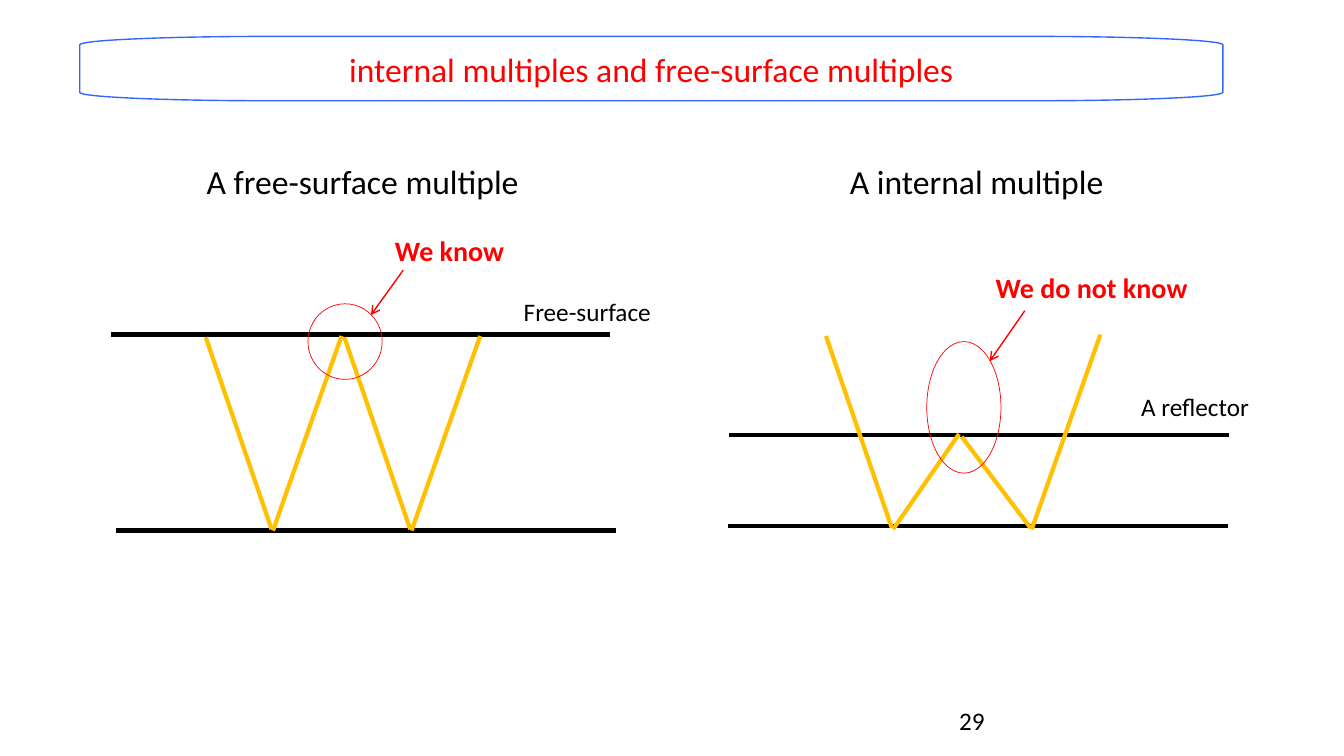
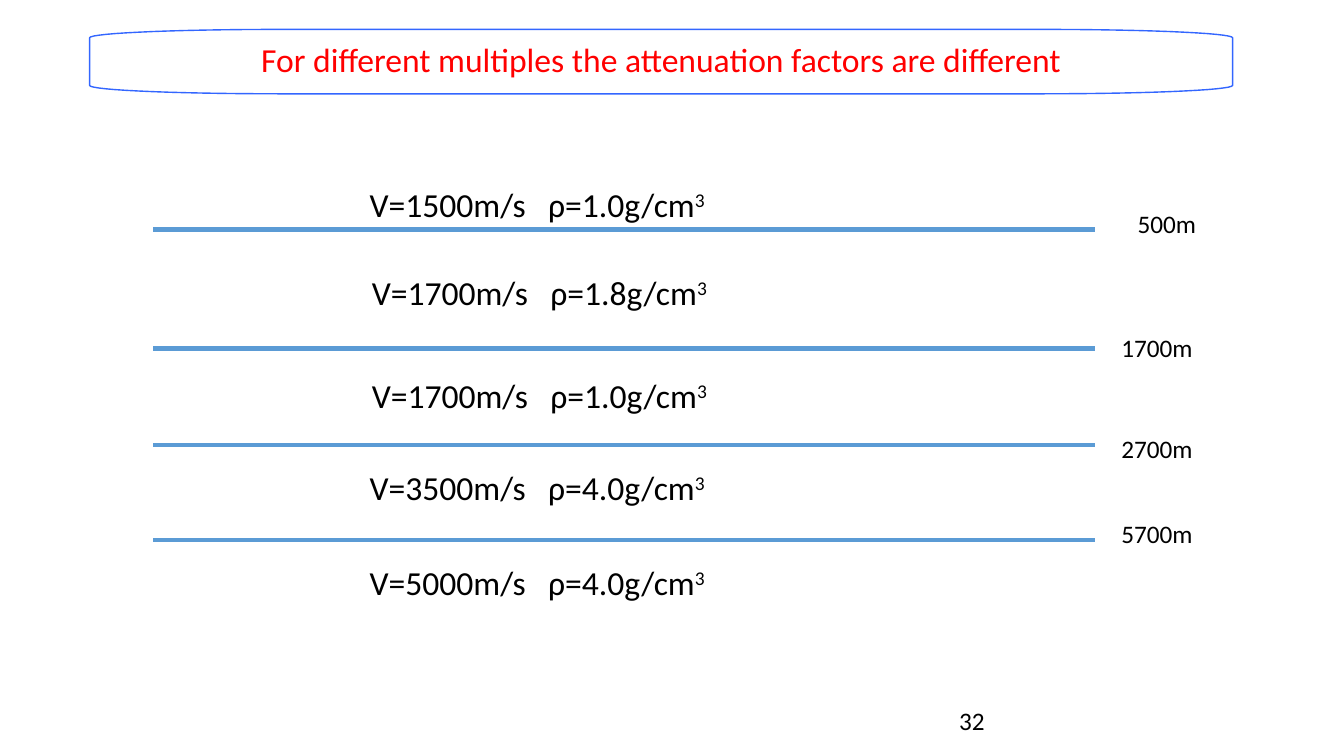
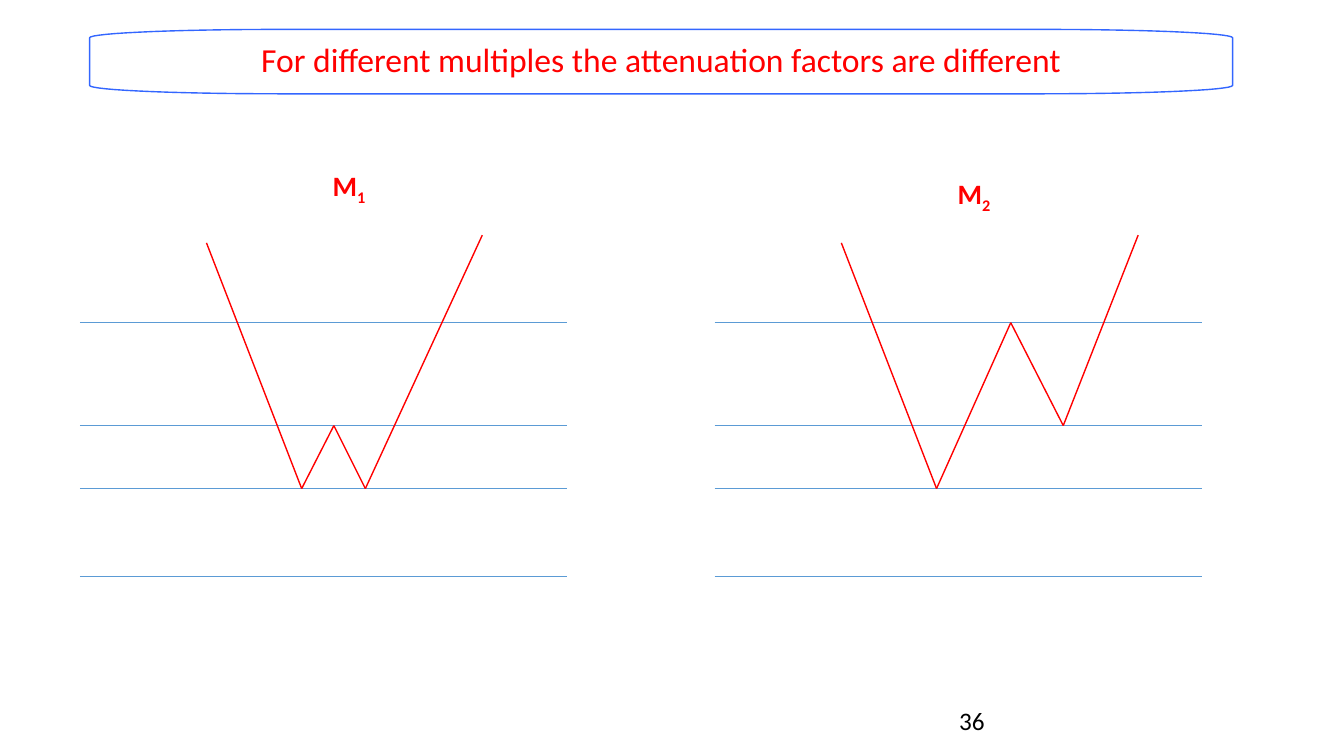
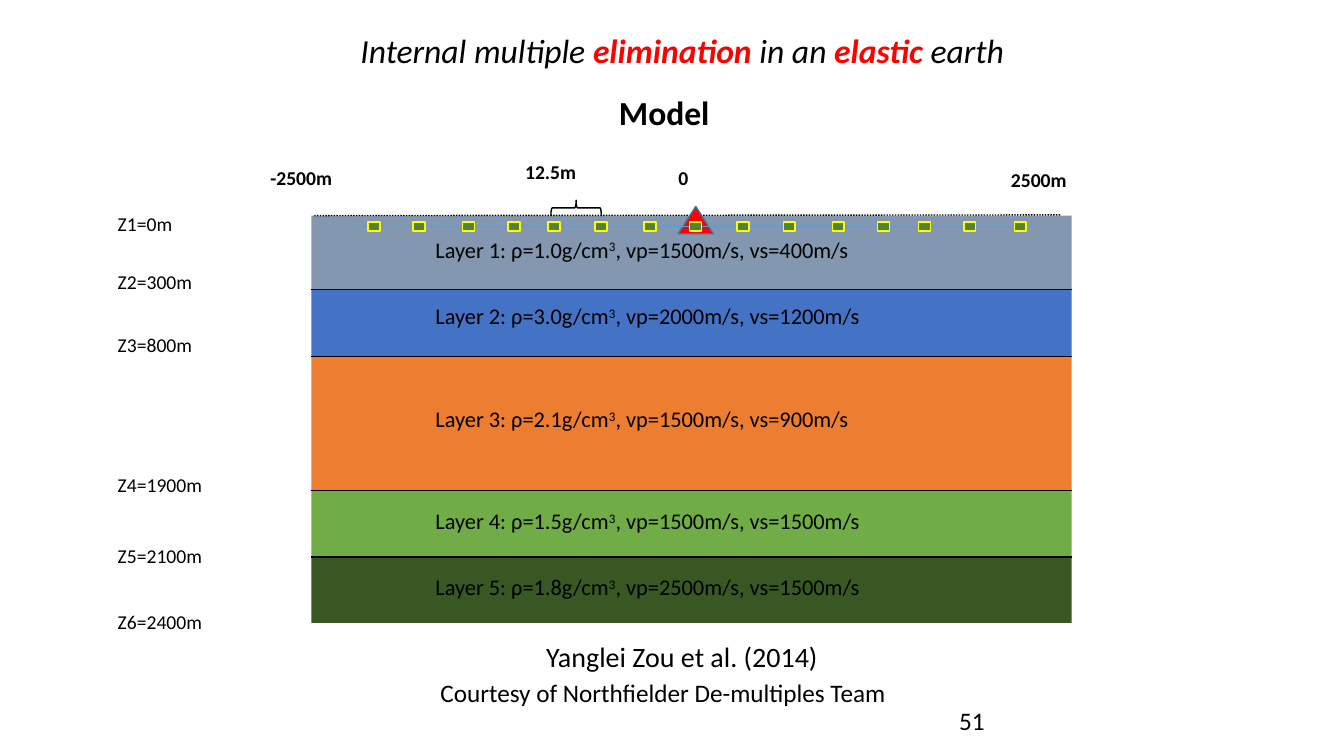
from itertools import pairwise
from math import cos, radians, sin

from lxml.etree import SubElement
from pptx import Presentation
from pptx.dml.color import RGBColor
from pptx.enum.dml import MSO_LINE
from pptx.enum.shapes import MSO_CONNECTOR, MSO_SHAPE
from pptx.enum.text import MSO_ANCHOR, MSO_AUTO_SIZE, PP_ALIGN
from pptx.oxml.ns import qn
from pptx.util import Pt

FONT = "Calibri"
BLACK = RGBColor(0x00, 0x00, 0x00)
RED = RGBColor(0xFF, 0x00, 0x00)
BAND_BLUE = RGBColor(0x33, 0x66, 0xFF)
LINE_BLUE = RGBColor(0x5B, 0x9B, 0xD5)
RAY_GOLD = RGBColor(0xFF, 0xC0, 0x00)
SOURCE_EDGE = RGBColor(0x43, 0x73, 0x9E)
RECEIVER_GREEN = RGBColor(0x54, 0x82, 0x35)
YELLOW = RGBColor(0xFF, 0xFF, 0x00)

SUPER = {"baseline": 30000}
SUB = {"baseline": -25000}
KEYWORD = {"bold": True, "color": RED}
HEIGHTS = {14: 24.5, 16: 26.5, 18: 29, 20: 31.5, 24: 36}

SURFACE_TITLE = "internal multiples and free-surface multiples"
FACTOR_TITLE = "For different multiples the attenuation factors are different"
MODEL_TITLE = [("Internal multiple ", {}), ("elimination", KEYWORD), (" in an ", {}),
               ("elastic", KEYWORD), (" earth", {})]

SURFACE_WIDTH = 357
SURFACES = [(79, 239), (83, 379), (521, 311), (520, 376)]
SURFACE_RAYS = [
    (147, 241, 194, 378), (244, 240, 195, 379),
    (246, 241, 293, 378), (343, 240, 294, 379),
    (590, 240, 637, 377), (685, 310, 638, 378),
    (687, 312, 736, 377), (786, 239, 737, 378),
]
SURFACE_LABELS = [
    ("Free-surface", 367, 208, 106.5, 18), ("A reflector", 808, 276, 93, 18),
    ("A internal multiple", 600, 111.5, 198, 24),
    ("A free-surface multiple", 140.5, 111.5, 240.5, 24),
]
CALLOUTS = [
    ("We know", (275, 163, 94), (220, 217, 53, 54), (288, 193, 265, 225)),
    ("We do not know", (704, 190, 154), (662, 244, 53, 94), (732, 222, 707, 258)),
]

INTERFACES = [164, 249, 318, 386]
DEPTHS = [("500m", 805.5, 145.5, 57), ("1700m", 794, 234, 66),
          ("2700m", 794, 306, 66), ("5700m", 794, 366.5, 66)]
MEDIA = [
    ("V=1500m/s", "ρ=1.0g/cm", 257, 128), ("V=1700m/s", "ρ=1.8g/cm", 258.5, 191),
    ("V=1700m/s", "ρ=1.0g/cm", 258.5, 264), ("V=3500m/s", "ρ=4.0g/cm", 257, 330),
    ("V=5000m/s", "ρ=4.0g/cm", 257, 398),
]

PANEL_WIDTH = 348
PANEL_LINES = [230.5, 304, 349, 412]
PANELS = [
    ("1", 57, (230.5, 116.5),
     [(90.5, 173.5), (158.5, 349), (181.5, 304), (204, 349), (287.5, 168)]),
    ("2", 510.5, (677, 122.5),
     [(90.5, 173.5), (158.5, 349), (211.5, 230.5), (249, 304), (302.5, 168)]),
]

MODEL_LEFT, MODEL_WIDTH = 222.5, 543
LAYER_EDGES = [154, 207, 254.5, 350.5, 398, 445]
LAYERS = [
    ("1.0", "vp=1500m/s, vs=400m/s", 165, RGBColor(0x84, 0x97, 0xB0)),
    ("3.0", "vp=2000m/s, vs=1200m/s", 212.5, RGBColor(0x44, 0x72, 0xC4)),
    ("2.1", "vp=1500m/s, vs=900m/s", 286, RGBColor(0xED, 0x7D, 0x31)),
    ("1.5", "vp=1500m/s, vs=1500m/s", 359, RGBColor(0x70, 0xAD, 0x47)),
    ("1.8", "vp=2500m/s, vs=1500m/s", 406, RGBColor(0x38, 0x57, 0x23)),
]
LEVELS = [("0m", 147.5), ("300m", 189.5), ("800m", 234.5),
          ("1900m", 334), ("2100m", 385), ("2400m", 432)]
OFFSETS = [("-2500m", 186, 115, 59), ("0", 477.5, 115, 21.5),
           ("2500m", 715, 116.5, 55), ("12.5m", 368, 111, 51)]
RECEIVERS = [263, 295, 330.5, 363, 391.5, 425, 460, 492.5, 526.5,
             559.5, 594.5, 627, 656, 688.5, 724.5]


def write(sp, runs, size=18, color=BLACK, bold=False, italic=False,
          align=PP_ALIGN.LEFT, anchor=MSO_ANCHOR.TOP, wrap=True, spacing=None, tab=None):
    tf = sp.text_frame
    tf.word_wrap = wrap
    tf.auto_size = MSO_AUTO_SIZE.NONE if wrap else MSO_AUTO_SIZE.SHAPE_TO_FIT_TEXT
    tf.vertical_anchor = anchor
    p = tf.paragraphs[0]
    if tab:
        tabs = SubElement(p._p.get_or_add_pPr(), qn("a:tabLst"))
        SubElement(tabs, qn("a:tab"), pos=str(Pt(tab)), algn="l")
    p.alignment = align
    if spacing:
        p.line_spacing = spacing
    for words, extra in [(runs, {})] if isinstance(runs, str) else runs:
        r = p.add_run()
        r.text = words
        r.font.name = FONT
        r.font.size = Pt(size)
        r.font.bold = extra.get("bold", bold)
        r.font.italic = italic
        r.font.color.rgb = extra.get("color", color)
        if "baseline" in extra:
            r._r.get_or_add_rPr().set("baseline", str(extra["baseline"]))


def add_text(slide, runs, x, y, w, size=18, **style):
    sp = slide.shapes.add_textbox(Pt(x), Pt(y), Pt(w), Pt(HEIGHTS[size]))
    write(sp, runs, size=size, **style)


def add_line(slide, x1, y1, x2, y2, color, width=1, arrow=False, dash=None):
    c = slide.shapes.add_connector(MSO_CONNECTOR.STRAIGHT, Pt(x1), Pt(y1), Pt(x2), Pt(y2))
    c.line.color.rgb = color
    c.line.width = Pt(width)
    if dash:
        c.line.dash_style = dash
    if arrow:
        SubElement(c.line._get_or_add_ln(), qn("a:tailEnd"), type="arrow")
    SubElement(c._element.spPr, qn("a:effectLst"))


def paint(sp, fill=None, line=None, width=1):
    sp.shadow.inherit = False
    if fill is None:
        sp.fill.background()
    else:
        sp.fill.solid()
        sp.fill.fore_color.rgb = fill
    if line is None:
        sp.line.fill.background()
    else:
        sp.line.color.rgb = line
        sp.line.width = Pt(width)


def add_preset(slide, kind, x, y, w, h, **look):
    sp = slide.shapes.add_shape(kind, Pt(x), Pt(y), Pt(w), Pt(h))
    paint(sp, **look)
    return sp


def set_title(slide, runs, x, y, w, h, **style):
    sp = slide.shapes.title
    sp.left, sp.top, sp.width, sp.height = Pt(x), Pt(y), Pt(w), Pt(h)
    write(sp, runs, size=24, align=PP_ALIGN.CENTER, anchor=MSO_ANCHOR.MIDDLE, **style)


def add_band_title(slide, words, x, y, spacing=None):
    w, h, rx, ry = 816.5, 46, 136, 6
    centres = [(x + w - rx, y + h - ry), (x + rx, y + h - ry),
               (x + rx, y + ry), (x + w - rx, y + ry)]
    outline = [(Pt(cx + rx * cos(radians(a))), Pt(cy + ry * sin(radians(a))))
               for i, (cx, cy) in enumerate(centres)
               for a in range(90 * i, 90 * i + 91, 6)]
    fb = slide.shapes.build_freeform(*outline[0])
    fb.add_line_segments(outline[1:], close=True)
    paint(fb.convert_to_shape(), line=BAND_BLUE)
    set_title(slide, words, x, y, w, h, color=RED, spacing=spacing)


def add_slide(prs, number):
    slide = prs.slides.add_slide(prs.slide_layouts[5])
    add_text(slide, number, 678, 500.5, 216)
    return slide


def build_surfaces(prs):
    slide = add_slide(prs, "29")
    add_band_title(slide, SURFACE_TITLE, 57, 26)
    for x, y in SURFACES:
        add_line(slide, x, y, x + SURFACE_WIDTH, y, BLACK, 3)
    for ray in SURFACE_RAYS:
        add_line(slide, *ray, RAY_GOLD, 3)
    for words, x, y, w, size in SURFACE_LABELS:
        add_text(slide, words, x, y, w, size, wrap=False)
    for words, place, ring, arrow in CALLOUTS:
        add_preset(slide, MSO_SHAPE.OVAL, *ring, line=RED, width=0.5)
        add_line(slide, *arrow, RED, arrow=True)
        add_text(slide, words, *place, 20, color=RED, bold=True, wrap=False)


def build_media(prs):
    slide = add_slide(prs, "32")
    add_band_title(slide, FACTOR_TITLE, 64, 21, spacing=0.9)
    for y in INTERFACES:
        add_line(slide, 109.5, y, 782.5, y, LINE_BLUE, 3)
    for words, x, y, w in DEPTHS:
        add_text(slide, words, x, y, w, wrap=False)
    for velocity, density, x, y in MEDIA:
        add_text(slide, [(f"{velocity}\t{density}", {}), ("3", SUPER)], x, y, 448, 24,
                 tab=127.5)


def build_multiples(prs):
    slide = add_slide(prs, "36")
    add_band_title(slide, FACTOR_TITLE, 64, 21, spacing=0.9)
    for index, left, label, ray in PANELS:
        for y in PANEL_LINES:
            add_line(slide, left, y, left + PANEL_WIDTH, y, LINE_BLUE)
        for (x1, y1), (x2, y2) in pairwise(ray):
            add_line(slide, left + x1, y1, left + x2, y2, RED)
        add_text(slide, [("M", {}), (index, SUB)], *label, 39, 20, color=RED, bold=True,
                 wrap=False)


def build_model(prs):
    slide = add_slide(prs, "51")
    set_title(slide, MODEL_TITLE, 151, 17.5, 672.5, 36, italic=True)
    add_text(slide, "Model", 435, 62, 80, 24, bold=True, wrap=False)
    right = MODEL_LEFT + MODEL_WIDTH
    for (top, bottom), layer in zip(pairwise(LAYER_EDGES), LAYERS):
        add_preset(slide, MSO_SHAPE.RECTANGLE, MODEL_LEFT, top, MODEL_WIDTH, bottom - top,
                   fill=layer[3])
    for i, (density, speeds, y, _) in enumerate(LAYERS, 1):
        runs = [(f"Layer {i}: ρ={density}g/cm", {}), ("3", SUPER), (f", {speeds}", {})]
        add_text(slide, runs, 304, y, 450, 16)
    for i, (depth, y) in enumerate(LEVELS, 1):
        add_text(slide, f"Z{i}={depth}", 77, y, 166, 14)
    add_line(slide, 224.5, 154, 757.5, 153.5, BLACK, dash=MSO_LINE.ROUND_DOT)
    for y in LAYER_EDGES[1:-1]:
        add_line(slide, MODEL_LEFT, y, right, y, BLACK)
    add_preset(slide, MSO_SHAPE.ISOSCELES_TRIANGLE, 484.5, 147.5, 25, 19.5,
               fill=RED, line=SOURCE_EDGE)
    add_line(slide, 254, 161.5, 739.5, 162, LINE_BLUE, 0.5)
    for x in RECEIVERS:
        add_preset(slide, MSO_SHAPE.RECTANGLE, x, 158.5, 8.5, 6.5,
                   fill=RECEIVER_GREEN, line=YELLOW)
    for words, x, y, w in OFFSETS:
        add_text(slide, words, x, y, w, 14, bold=True, wrap=False)
    brace = add_preset(slide, MSO_SHAPE.LEFT_BRACE, 406, 130.5, 11, 36, line=BLACK)
    brace.rotation = 90
    add_text(slide, "Yanglei Zou et al. (2014)", 383, 453.5, 211.5, 20, wrap=False)
    add_text(slide, "Courtesy of Northfielder De-multiples Team", 307.5, 480, 350, 18,
             wrap=False)


def main():
    prs = Presentation()
    prs.slide_width, prs.slide_height = Pt(960), Pt(540)
    for build in (build_surfaces, build_media, build_multiples, build_model):
        build(prs)
    prs.save("out.pptx")


if __name__ == "__main__":
    main()
